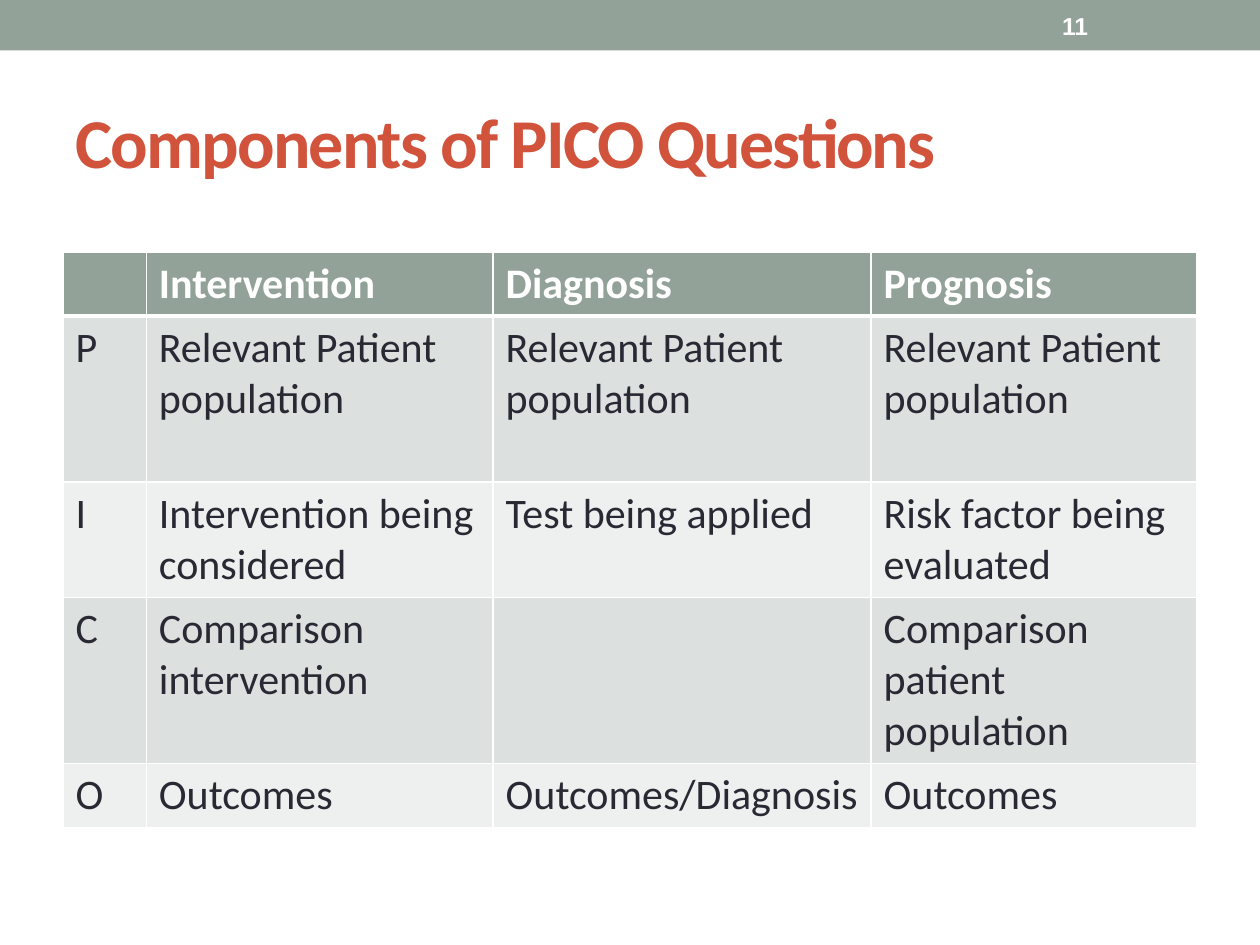
import pptx
import pptx.util
import pptx.dml.color
import pptx.enum.shapes
import pptx.enum.text
import pptx.oxml
import pptx.oxml.ns
from dataclasses import dataclass
from pptx.util import Cm, Pt


@dataclass(frozen=True)
class Theme:
    sage: str = "93A299"
    red: str = "D2533C"
    ink: str = "292934"
    white: str = "FFFFFF"
    bands: tuple = ("DCE0DE", "EEF0EF")
    font: str = "Calibri"
    number_font: str = "Arial"
    title_size: int = 40
    table_size: int = 24
    number_size: int = 14


T = Theme()
MIDDLE = pptx.enum.text.MSO_ANCHOR.MIDDLE

COLUMN_WIDTHS = (1.68, 6.99, 7.62, 6.57)
ROW_HEIGHTS = (1.29, 3.35, 2.32, 3.35, 1.29)
ROWS = (
    ("", "Intervention", "Diagnosis", "Prognosis"),
    ("P",) + ("Relevant Patient population",) * 3,
    ("I", "Intervention being considered", "Test being applied",
     "Risk factor being evaluated"),
    ("C", "Comparison intervention", "", "Comparison patient population"),
    ("O", "Outcomes", "Outcomes/Diagnosis", "Outcomes"),
)


def rgb(value):
    return pptx.dml.color.RGBColor.from_string(value)


def write(tf, text, size, color, font=T.font, bold=False, spacing=None):
    tf.word_wrap = True
    p = tf.paragraphs[0]
    p.font.size = Pt(size)
    if not text:
        return
    r = p.add_run()
    r.text = text
    r.font.name, r.font.size, r.font.bold = font, Pt(size), bold
    r.font.color.rgb = rgb(color)
    if spacing is not None:
        r.font._element.set("spc", str(round(spacing * 100)))


def add_text(s, box, text, **style):
    tf = s.shapes.add_textbox(*map(Cm, box)).text_frame
    tf.vertical_anchor = MIDDLE
    write(tf, text, **style)


def set_borders(cell, bottom=1):
    tc_pr = cell._tc.get_or_add_tcPr()
    for i, (side, width) in enumerate(zip("LRTB", (1, 1, 1, bottom))):
        tc_pr.insert(i, pptx.oxml.parse_xml(
            f'<a:ln{side} {pptx.oxml.ns.nsdecls("a")} w="{Pt(width)}">'
            f'<a:solidFill><a:srgbClr val="{T.white}"/></a:solidFill></a:ln{side}>'))


def add_header(s, x, y, w, h):
    # Top band with the slide number near its right end
    sp = s.shapes.add_shape(pptx.enum.shapes.MSO_SHAPE.RECTANGLE,
                            Cm(x), Cm(y), Cm(w), Cm(h))
    sp.shadow.inherit = False
    sp.fill.solid()
    sp.fill.fore_color.rgb = rgb(T.sage)
    sp.line.fill.background()
    add_text(s, (x + w - 4.24, y + 0.05, 2.97, h - 0.1), "11", size=T.number_size,
             color=T.white, font=T.number_font, bold=True)


def add_title(s, x, y, w, h):
    add_text(s, (x, y, w, h), "Components of PICO Questions", size=T.title_size,
             color=T.red, bold=True, spacing=-1)


def add_pico_table(s, x, y):
    table = s.shapes.add_table(len(ROWS), len(COLUMN_WIDTHS), Cm(x), Cm(y),
                               Cm(sum(COLUMN_WIDTHS)), Cm(sum(ROW_HEIGHTS))).table
    for column, width in zip(table.columns, COLUMN_WIDTHS):
        column.width = Cm(width)
    for i, (texts, height) in enumerate(zip(ROWS, ROW_HEIGHTS)):
        table.rows[i].height = Cm(height)
        head = i == 0
        for j, text in enumerate(texts):
            cell = table.cell(i, j)
            cell.fill.solid()
            cell.fill.fore_color.rgb = rgb(T.sage if head else T.bands[(i - 1) % 2])
            set_borders(cell, bottom=3 if head else 1)
            write(cell.text_frame, text, size=T.table_size,
                  color=T.white if head else T.ink, bold=head)
    table.cell(2, 1).vertical_anchor = MIDDLE


def main():
    prs = pptx.Presentation()
    prs.slide_width, prs.slide_height = Cm(25.4), Cm(19.05)
    s = prs.slides.add_slide(prs.slide_layouts[6])
    add_header(s, 0, 0, 25.4, 1.02)
    add_title(s, 1.27, 1.47, 22.86, 2.74)
    add_pico_table(s, 1.27, 5.08)
    prs.save("out.pptx")


if __name__ == "__main__":
    main()
